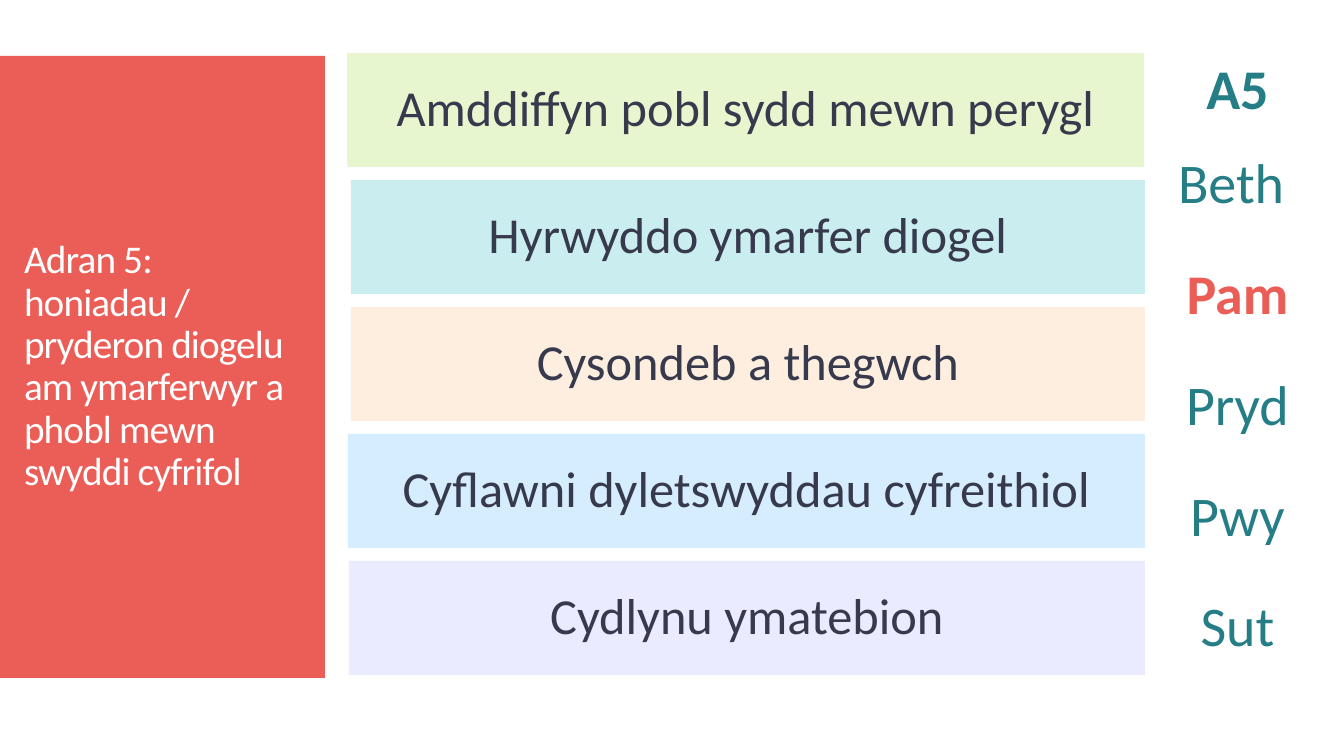
from dataclasses import dataclass

from lxml.etree import SubElement
from pptx import Presentation
from pptx.dml.color import RGBColor
from pptx.enum.shapes import MSO_SHAPE
from pptx.enum.text import MSO_ANCHOR, MSO_AUTO_SIZE, PP_ALIGN
from pptx.oxml.ns import qn
from pptx.slide import Slide
from pptx.text.text import TextFrame
from pptx.util import Emu, Pt

PIXELS_PER_INCH = 100.8
FONT = "Calibri"
COLOURS = {
    "coral": "EB5E57",
    "teal": "257D86",
    "ink": "37394C",
    "white": "FFFFFF",
    "lime": "E8F6CF",
    "aqua": "CAEDF0",
    "peach": "FDEEE0",
    "sky": "D5EDFF",
    "lilac": "DDDDFF",
}
BAR_TOP, BAR_HEIGHT, BAR_PITCH = 53, 114, 127


@dataclass
class Bar:
    text: str
    colour: str
    left: int
    width: int
    opacity: int = 100


@dataclass
class Step:
    text: str
    colour: str = "teal"
    bold: bool = False


BARS = [
    Bar("Amddiffyn pobl sydd mewn perygl", "lime", 347, 797),
    Bar("Hyrwyddo ymarfer diogel", "aqua", 351, 794),
    Bar("Cysondeb a thegwch", "peach", 351, 794),
    Bar("Cyflawni dyletswyddau cyfreithiol", "sky", 348, 797),
    Bar("Cydlynu ymatebion", "lilac", 349, 796, opacity=56),
]
STEPS = [
    Step("A5", bold=True),
    Step("Beth "),
    Step("Pam", "coral", True),
    Step("Pryd"),
    Step("Pwy"),
    Step("Sut"),
]


def px(length: int) -> Emu:
    return Emu(round(length * 914400 / PIXELS_PER_INCH))


def rgb(name: str) -> RGBColor:
    return RGBColor.from_string(COLOURS[name])


def place(shape, left: int, top: int, width: int, height: int) -> None:
    shape.left, shape.top = px(left), px(top)
    shape.width, shape.height = px(width), px(height)


def fill_shape(shape, colour: str, opacity: int = 100) -> None:
    shape.fill.solid()
    shape.fill.fore_color.rgb = rgb(colour)
    if opacity < 100:
        colour_element = shape.fill._xPr.find(qn("a:solidFill"))[0]
        SubElement(colour_element, qn("a:alpha"), val=str(opacity * 1000))


def format_paragraph(paragraph, size: int, colour: str, alignment: PP_ALIGN, bold: bool = False) -> None:
    paragraph.alignment = alignment
    paragraph.line_spacing = 0.9
    paragraph.font.name = FONT
    paragraph.font.size = Pt(size)
    paragraph.font.bold = bold
    paragraph.font.color.rgb = rgb(colour)


def prepare_frame(frame: TextFrame, anchor: MSO_ANCHOR, left: int, right: int) -> None:
    frame.word_wrap = True
    frame.auto_size = MSO_AUTO_SIZE.NONE
    frame.vertical_anchor = anchor
    frame.margin_left, frame.margin_right = px(left), px(right)
    frame.margin_top = frame.margin_bottom = px(5)


def draw_title(slide: Slide) -> None:
    title = slide.shapes.title
    place(title, 0, 56, 325, 622)
    fill_shape(title, "coral")
    frame = title.text_frame
    prepare_frame(frame, MSO_ANCHOR.MIDDLE, 24, 24)
    frame.text = "Adran 5:\vhoniadau / pryderon diogelu am ymarferwyr a phobl mewn swyddi cyfrifol"
    paragraph = frame.paragraphs[0]
    format_paragraph(paragraph, 28, "white", PP_ALIGN.LEFT)
    for run in paragraph.runs:
        run.font._element.set("spc", "-60")


def draw_bar(slide: Slide, bar: Bar, top: int) -> None:
    shape = slide.shapes.add_shape(
        MSO_SHAPE.RECTANGLE, px(bar.left), px(top), px(bar.width), px(BAR_HEIGHT)
    )
    shape.shadow.inherit = False
    shape.line.fill.background()
    fill_shape(shape, bar.colour, bar.opacity)
    prepare_frame(shape.text_frame, MSO_ANCHOR.MIDDLE, 10, 10)
    shape.text_frame.text = bar.text
    format_paragraph(shape.text_frame.paragraphs[0], 36, "ink", PP_ALIGN.CENTER)


def draw_steps(slide: Slide, steps: list[Step]) -> None:
    body = slide.placeholders[1]
    place(body, 1145, 56, 199, 619)
    frame = body.text_frame
    prepare_frame(frame, MSO_ANCHOR.TOP, 10, 24)
    frame.text = "\n".join(step.text for step in steps)
    for index, (paragraph, step) in enumerate(zip(frame.paragraphs, steps)):
        properties = paragraph._p.get_or_add_pPr()
        properties.set("marL", "0")
        properties.set("indent", "0")
        SubElement(properties, qn("a:buNone"))
        format_paragraph(paragraph, 40, step.colour, PP_ALIGN.CENTER, step.bold)
        paragraph.space_before = Pt(12 if index else 0)
        paragraph.space_after = Pt(24 if index else 12)


def main() -> None:
    presentation = Presentation()
    presentation.slide_width, presentation.slide_height = px(1344), px(756)
    slide = presentation.slides.add_slide(presentation.slide_layouts[1])
    draw_title(slide)
    for index, bar in enumerate(BARS):
        draw_bar(slide, bar, BAR_TOP + index * BAR_PITCH)
    draw_steps(slide, STEPS)
    presentation.save("out.pptx")


if __name__ == "__main__":
    main()
